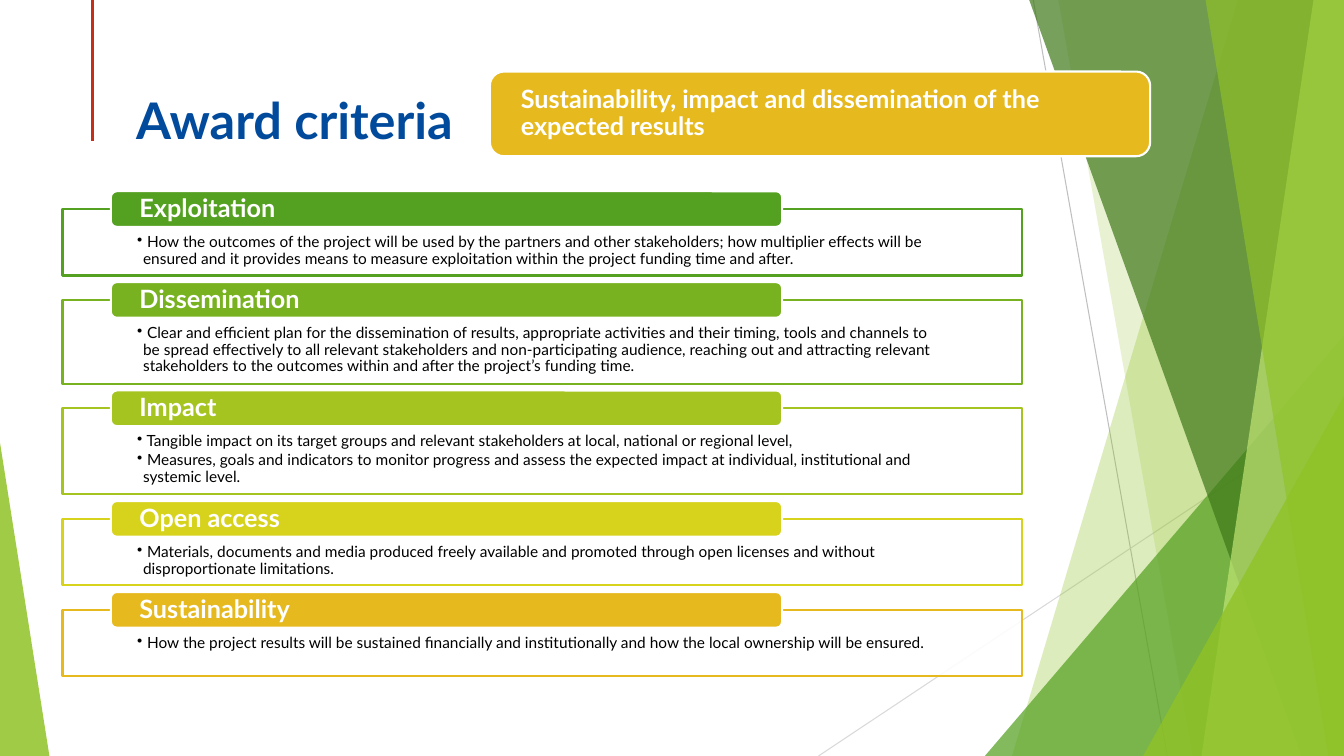
from dataclasses import dataclass

import lxml.etree
import pptx
import pptx.dml.color
import pptx.enum.shapes
import pptx.enum.text
import pptx.oxml.ns
import pptx.util

RGBColor = pptx.dml.color.RGBColor
SHAPE = pptx.enum.shapes.MSO_SHAPE
ANCHOR = pptx.enum.text.MSO_ANCHOR
qn = pptx.oxml.ns.qn

WHITE = RGBColor(0xFF, 0xFF, 0xFF)
BLACK = RGBColor(0, 0, 0)
NAVY = RGBColor(0x02, 0x4B, 0x9C)
RED = RGBColor(0xC4, 0x2F, 0x1A)
GREY = RGBColor(0xBF, 0xBF, 0xBF)
PALE_GREY = RGBColor(0xD9, 0xD9, 0xD9)
LIME = RGBColor(0x90, 0xC2, 0x26)
PALE_LIME = RGBColor(0xC0, 0xE4, 0x74)
FOREST = RGBColor(0x3F, 0x78, 0x19)
GREEN = RGBColor(0x54, 0xA0, 0x21)
LEAF = RGBColor(0x79, 0xB2, 0x20)
OLIVE = RGBColor(0xA5, 0xC4, 0x1F)
YELLOW = RGBColor(0xD7, 0xD3, 0x1D)
GOLD = RGBColor(0xE6, 0xB9, 0x1E)

FONT = "Lato"
SLIDE_W, SLIDE_H = pptx.util.Inches(13.333), pptx.util.Inches(7.5)

# All places and sizes are percentages of the slide's width or height.
PANEL_X, PANEL_W, PANEL_TOP, PANEL_GAP = 4.65, 71.4, 27.65, 3.23
HEADER_X, HEADER_W, HEADER_H = 8.25, 49.95, 4.72


@dataclass
class Line:
    x1: float
    y1: float
    x2: float
    y2: float
    color: RGBColor
    weight: float = 0.75


@dataclass
class Band:
    """Full-height facet running from its slanted left side to the right edge."""
    top_x: float
    bottom_x: float
    color: RGBColor
    opacity: int


@dataclass
class Wedge:
    """Right-angled triangle on the bottom edge; apex 1 is right, 0 is left."""
    x: float
    y: float
    w: float
    apex: int
    color: RGBColor
    opacity: int


@dataclass
class Criterion:
    name: str
    points: list[str]
    height: float
    color: RGBColor


LINES = [
    Line(76.88, 0, 86.85, 100, GREY),
    Line(100, 53.73, 60.9, 100, PALE_GREY),
    Line(6.9, 0, 6.9, 18.67, RED, 2.25),
]
FACETS = [
    Band(92.1, 75.3, LIME, 30),
    Band(78.75, 88.73, LIME, 20),
    Wedge(73.28, 44.4, 26.72, 1, GREEN, 72),
    Band(76.58, 96.83, FOREST, 70),
    Band(97.73, 89.4, PALE_LIME, 70),
    Band(89.7, 98.85, LIME, 65),
    Wedge(85.05, 52.4, 14.95, 1, LIME, 80),
    Wedge(0, 58.53, 3.68, 0, LIME, 85),
]
CRITERIA = [
    Criterion("Exploitation", [
        " How the outcomes of the project will be used by the partners and other stakeholders; how multiplier "
        "effects will be ensured and it provides means to measure exploitation within the project funding "
        "time and after."], 8.8, GREEN),
    Criterion("Dissemination", [
        " Clear and efficient plan for the dissemination of results, appropriate activities and their timing, "
        "tools and channels to be spread effectively to all relevant stakeholders and non-participating "
        "audience, reaching out and attracting relevant stakeholders to the outcomes within and after the "
        "project’s funding time."], 11.1, LEAF),
    Criterion("Impact", [
        " Tangible impact on its target groups and relevant stakeholders at local, national or regional level,",
        " Measures, goals and indicators to monitor progress and assess the expected impact at individual, "
        "institutional and systemic level."], 11.4, OLIVE),
    Criterion("Open access", [
        " Materials, documents and media produced freely available and promoted through open licenses and "
        "without disproportionate limitations."], 8.8, YELLOW),
    Criterion("Sustainability", [
        " How the project results will be sustained financially and institutionally and how the local "
        "ownership will be ensured."], 8.8, GOLD),
]


def across(share: float) -> int:
    return round(SLIDE_W * share / 100)


def down(share: float) -> int:
    return round(SLIDE_H * share / 100)


def paint(sp, color: RGBColor, opacity: int = 100, line: RGBColor | None = None) -> None:
    sp.shadow.inherit = False
    sp.fill.solid()
    sp.fill.fore_color.rgb = color
    if opacity < 100:
        clr = sp._element.spPr.find(qn("a:solidFill")).find(qn("a:srgbClr"))
        lxml.etree.SubElement(clr, qn("a:alpha")).set("val", str(opacity * 1000))
    if line is None:
        sp.line.fill.background()
    else:
        sp.line.color.rgb = line
        sp.line.width = pptx.util.Pt(1.5)


def add_box(slide, kind, x: float, y: float, w: float, h: float):
    return slide.shapes.add_shape(kind, across(x), down(y), across(w), down(h))


def write(sp, *texts: str, size: float, color: RGBColor, bold: bool = False, bullet: bool = False,
          anchor=ANCHOR.MIDDLE, spacing: float = 0.9, after: float = 0,
          margins: tuple[float, float, float, float] = (2, 0, 2, 0)) -> None:
    """Fill a shape with one paragraph per text; margins are left, top, right, bottom."""
    tf = sp.text_frame
    tf.word_wrap = True
    tf.auto_size = pptx.enum.text.MSO_AUTO_SIZE.NONE
    tf.vertical_anchor = anchor
    left, top, right, bottom = margins
    tf.margin_left, tf.margin_right = across(left), across(right)
    tf.margin_top, tf.margin_bottom = down(top), down(bottom)
    for i, text in enumerate(texts):
        p = tf.add_paragraph() if i else tf.paragraphs[0]
        if bullet:
            pPr = p._p.get_or_add_pPr()
            pPr.set("marL", str(pptx.util.Inches(0.06)))
            pPr.set("indent", str(-pptx.util.Inches(0.06)))
            lxml.etree.SubElement(pPr, qn("a:buChar")).set("char", "•")
        p.alignment = pptx.enum.text.PP_ALIGN.LEFT
        p.line_spacing = spacing
        p.space_after = pptx.util.Pt(after)
        r = p.add_run()
        r.text = text
        r.font.name = FONT
        r.font.size = pptx.util.Pt(size)
        r.font.bold = bold
        r.font.color.rgb = color


def draw_line(slide, line: Line) -> None:
    cxn = slide.shapes.add_connector(
        pptx.enum.shapes.MSO_CONNECTOR.STRAIGHT,
        across(line.x1), down(line.y1), across(line.x2), down(line.y2))
    cxn.line.color.rgb = line.color
    cxn.line.width = pptx.util.Pt(line.weight)
    lxml.etree.SubElement(cxn._element.spPr, qn("a:effectLst"))


def draw_facet(slide, facet: Band | Wedge) -> None:
    if isinstance(facet, Band):
        fb = slide.shapes.build_freeform(across(facet.top_x), 0)
        fb.add_line_segments([(SLIDE_W, 0), (SLIDE_W, SLIDE_H), (across(facet.bottom_x), SLIDE_H)])
        sp = fb.convert_to_shape()
    else:
        sp = add_box(slide, SHAPE.ISOSCELES_TRIANGLE, facet.x, facet.y, facet.w, 100 - facet.y)
        sp.adjustments[0] = facet.apex
    paint(sp, facet.color, facet.opacity)


def draw_label(slide, text: str, x: float, y: float, w: float, h: float, color: RGBColor) -> None:
    sp = add_box(slide, SHAPE.ROUNDED_RECTANGLE, x, y, w, h)
    paint(sp, color, line=WHITE)
    write(sp, text, size=18, color=WHITE, bold=True)


def draw_criterion(slide, item: Criterion, top: float) -> None:
    sp = add_box(slide, SHAPE.RECTANGLE, PANEL_X, top, PANEL_W, item.height)
    paint(sp, WHITE, 90, item.color)
    write(sp, *item.points, size=11, color=BLACK, bullet=True, anchor=ANCHOR.TOP,
          after=1.65, margins=(5.55, 3.33, 5.55, 1.2))
    draw_label(slide, item.name, HEADER_X, top - HEADER_H / 2, HEADER_W, HEADER_H, item.color)


def main() -> None:
    prs = pptx.Presentation()
    prs.slide_width, prs.slide_height = SLIDE_W, SLIDE_H
    slide = prs.slides.add_slide(prs.slide_layouts[5])
    title = slide.shapes.title
    title.left, title.top, title.width, title.height = across(9.38), down(11.07), across(70.5), down(19.2)
    write(title, "Award criteria", size=36, color=NAVY, bold=True, anchor=ANCHOR.TOP,
          spacing=1, margins=(0.75, 0.67, 0.75, 0.67))
    for line in LINES:
        draw_line(slide, line)
    for facet in FACETS:
        draw_facet(slide, facet)
    top = PANEL_TOP
    for item in CRITERIA:
        draw_criterion(slide, item, top)
        top += item.height + PANEL_GAP
    draw_label(slide, "Sustainability, impact and dissemination of the expected results",
               36.45, 9.47, 49.13, 11.2, GOLD)
    prs.save("out.pptx")


if __name__ == "__main__":
    main()
